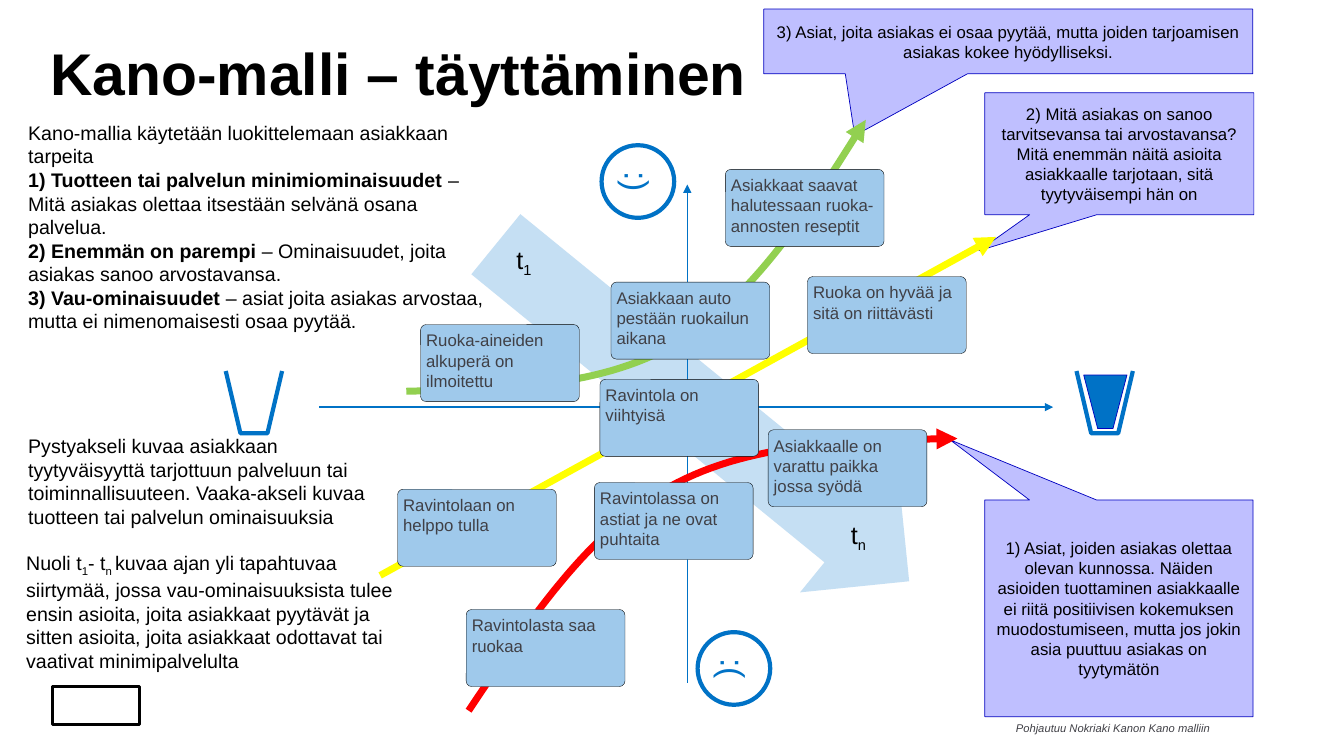
from lxml import etree
from pptx import Presentation
from pptx.dml.color import RGBColor
from pptx.enum.shapes import MSO_CONNECTOR, MSO_SHAPE
from pptx.enum.text import MSO_ANCHOR, PP_ALIGN
from pptx.oxml.ns import qn
from pptx.util import Cm, Pt

LEFT, CENTER = PP_ALIGN.LEFT, PP_ALIGN.CENTER
TOP, MIDDLE = MSO_ANCHOR.TOP, MSO_ANCHOR.MIDDLE
RECT, OVAL, ROUNDED = MSO_SHAPE.RECTANGLE, MSO_SHAPE.OVAL, MSO_SHAPE.ROUNDED_RECTANGLE
CALLOUT, DOWN_ARROW = MSO_SHAPE.RECTANGULAR_CALLOUT, MSO_SHAPE.DOWN_ARROW
TRAPEZOID, STRAIGHT = MSO_SHAPE.TRAPEZOID, MSO_CONNECTOR.STRAIGHT

THEME = {
    "font": "Arial",
    "black": RGBColor(0x00, 0x00, 0x00), "grey": RGBColor(0x40, 0x40, 0x46),
    "blue": RGBColor(0x00, 0x72, 0xC6), "navy": RGBColor(0x00, 0x00, 0xBF),
    "lilac": RGBColor(0xBF, 0xBF, 0xFF), "pale": RGBColor(0xC5, 0xDF, 0xF3),
    "sky": RGBColor(0x9F, 0xC9, 0xEB), "red": RGBColor(0xFF, 0x00, 0x00),
    "green": RGBColor(0x92, 0xD0, 0x50), "yellow": RGBColor(0xFF, 0xFF, 0x00),
    "title": 42, "face": 24, "time": 18, "body": 14, "label": 12, "source": 8,
}

prs = Presentation()
prs.slide_width, prs.slide_height = Cm(33.87), Cm(19.05)
s = prs.slides.add_slide(prs.slide_layouts[6])


def add_box(kind, x, y, w, h, fill=None, line=None, width=0.5):
    """Add a preset shape, or a text box when kind is None; lengths in cm."""
    at = Cm(x), Cm(y), Cm(w), Cm(h)
    if kind is None:
        return s.shapes.add_textbox(*at)
    sp = s.shapes.add_shape(kind, *at)
    sp.shadow.inherit = False
    if fill:
        sp.fill.solid()
        sp.fill.fore_color.rgb = THEME[fill]
    else:
        sp.fill.background()
    if line:
        sp.line.color.rgb = THEME[line]
        sp.line.width = Pt(width)
    else:
        sp.line.fill.background()
    return sp


def write(sp, lines, size, color="black", align=LEFT, anchor=TOP, wrap=True, mark="bold"):
    """Write one paragraph per line; text between asterisks is bold or subscript."""
    tf = sp.text_frame
    tf.word_wrap, tf.vertical_anchor = wrap, anchor
    for i, line in enumerate(lines):
        p = tf.add_paragraph() if i else tf.paragraphs[0]
        p.alignment = align
        for j, part in enumerate(line.split("*")):
            if not part:
                continue
            r = p.add_run()
            r.text = part
            r.font.name, r.font.size = THEME["font"], Pt(THEME[size])
            r.font.color.rgb = THEME[color]
            if j % 2 and mark == "bold":
                r.font.bold = True
            elif j % 2:
                r._r.get_or_add_rPr().set("baseline", "-25000")
    return tf


# Emblem and source note
add_box(RECT, 1.33, 17.3, 2.18, 0.95, line="black", width=2)
note = write(add_box(None, 25.35, 18.06, 5.46, 0.61),
             ["Pohjautuu Nokriaki Kanon Kano malliin"], "source", "grey", wrap=False)
note.paragraphs[0].runs[0].font.italic = True

# Title
tf = write(add_box(None, 1.27, 1.14, 31.22, 1.83), ["*Kano-malli – täyttäminen*"], "title")
tf.margin_left = tf.margin_right = tf.margin_top = tf.margin_bottom = 0
tf.paragraphs[0].line_spacing = 0.9

# Callouts for the three kinds of need
callouts = [
    (24.82, 2.34, 6.78, 3.07, -0.522, 0.796,
     "2) Mitä asiakas on sanoo tarvitsevansa tai arvostavansa? Mitä enemmän näitä "
     "asioita asiakkaalle tarjotaan, sitä tyytyväisempi hän on"),
    (24.82, 12.6, 6.76, 5.46, -0.63, -0.778,
     "1) Asiat, joiden asiakas olettaa olevan kunnossa. Näiden asioiden tuottaminen "
     "asiakkaalle ei riitä positiivisen kokemuksen muodostumiseen, mutta jos jokin "
     "asia puuttuu asiakas on tyytymätön"),
    (19.25, 0.23, 12.32, 1.63, -0.314, 1.456,
     "3) Asiat, joita asiakas ei osaa pyytää, mutta joiden tarjoamisen asiakas kokee "
     "hyödylliseksi."),
]
for x, y, w, h, tip_x, tip_y, text in callouts:
    sp = add_box(CALLOUT, x, y, w, h, "lilac", "navy")
    sp.adjustments[0], sp.adjustments[1] = tip_x, tip_y
    write(sp, [text], "label", align=CENTER, anchor=MIDDLE)

# Explanations on the left
write(add_box(None, 0.46, 2.92, 12.09, 5.64), [
    "Kano-mallia käytetään luokittelemaan asiakkaan tarpeita",
    "*1) Tuotteen tai palvelun minimiominaisuudet *– Mitä asiakas olettaa itsestään "
    "selvänä osana palvelua.",
    "*2) Enemmän on parempi *– Ominaisuudet, joita asiakas sanoo arvostavansa.",
    "*3) Vau-ominaisuudet *– asiat joita asiakas arvostaa, mutta ei nimenomaisesti "
    "osaa pyytää.",
], "body")
write(add_box(None, 0.46, 10.82, 9.7, 2.64), [
    "Pystyakseli kuvaa asiakkaan tyytyväisyyttä tarjottuun palveluun tai "
    "toiminnallisuuteen. Vaaka-akseli kuvaa tuotteen tai palvelun ominaisuuksia",
], "body")
write(add_box(None, 0.41, 13.77, 9.83, 3.25), [
    "Nuoli t*1*- t*n *kuvaa ajan yli tapahtuvaa siirtymää, jossa vau-ominaisuuksista "
    "tulee ensin asioita, joita asiakkaat pyytävät ja sitten asioita, joita asiakkaat "
    "odottavat tai vaativat minimipalvelulta",
], "body", mark="sub")

# Time arrow
add_box(DOWN_ARROW, 15.75, 3.68, 3.91, 13.44, "pale").rotation = 309.2

# Faces at the ends of the vertical axis
for x, y, face in [(17.58, 15.93, ":("), (15.16, 3.66, ":)")]:
    sp = add_box(OVAL, x, y, 1.83, 1.83, line="blue", width=3)
    sp.rotation = 90
    write(sp, [face], "face", "blue", CENTER, MIDDLE, wrap=False)

# Empty and full glass at the ends of the horizontal axis
for x in (5.69, 27.13):
    pen = s.shapes.build_freeform(Cm(x), Cm(9.35))
    pen.add_line_segments([(Cm(x + dx), Cm(y)) for dx, y in
                           [(0.37, 10.92), (1.05, 10.92), (1.42, 9.35)]], close=False)
    glass = pen.convert_to_shape()
    glass.shadow.inherit = False
    glass.fill.background()
    glass.line.color.rgb, glass.line.width = THEME["blue"], Pt(3)
water = add_box(TRAPEZOID, 27.31, 9.45, 1.09, 1.35, "blue", "navy")
water.rotation, water.adjustments[0] = 180, 0.323

# Axes and the straight "more is better" line
arrows = []
for x1, y1, x2, y2, color, width in [(8.05, 10.26, 26.54, 10.26, "blue", 1),
                                     (17.32, 17.2, 17.32, 4.65, "blue", 1),
                                     (9.58, 14.5, 25.1, 5.97, "yellow", 5)]:
    line = s.shapes.add_connector(STRAIGHT, Cm(x1), Cm(y1), Cm(x2), Cm(y2))
    etree.SubElement(line._element.spPr, qn("a:effectLst"))
    arrows.append((line, color, width))

# Curves for minimum and wow features, drawn through Bézier control points
STEPS = 30
curves = [
    ("red", [(11.81, 17.91), (13.31, 15.67), (14.81, 13.41), (16.87, 12.27),
             (18.92, 11.13), (21.51, 11.1), (24.13, 11.05)]),
    ("green", [(10.24, 9.86), (12.7, 9.8), (15.14, 9.78), (17.07, 8.64),
               (19.0, 7.49), (20.42, 5.26), (21.82, 3.02)]),
]
for color, knots in curves:
    points = []
    for k in (0, 3):
        for i in range(1, STEPS + 1):
            t = i / STEPS
            weights = (1 - t) ** 3, 3 * t * (1 - t) ** 2, 3 * t * t * (1 - t), t ** 3
            points.append([Cm(sum(w * knot[axis] for w, knot in zip(weights, knots[k:k + 4])))
                           for axis in (0, 1)])
    pen = s.shapes.build_freeform(Cm(knots[0][0]), Cm(knots[0][1]))
    pen.add_line_segments(points, close=False)
    curve = pen.convert_to_shape()
    curve.shadow.inherit = False
    curve.fill.background()
    arrows.append((curve, color, 5))

for sp, color, width in arrows:
    sp.line.color.rgb, sp.line.width = THEME[color], Pt(width)
    etree.SubElement(sp.line._get_or_add_ln(), qn("a:tailEnd"), type="triangle")

# Time labels
write(add_box(None, 12.75, 6.02, 0.91, 1.02), ["t*1*"], "time", align=CENTER,
      wrap=False, mark="sub")
write(add_box(None, 20.85, 12.95, 1.57, 1.02), ["t*n*"], "time", align=CENTER, mark="sub")

# Restaurant examples
examples = [
    (10.6, 8.18, "Ruoka-aineiden alkuperä on ilmoitettu"),
    (10.02, 12.33, "Ravintolaan on helppo tulla"),
    (11.75, 15.36, "Ravintolasta saa ruokaa"),
    (14.98, 12.16, "Ravintolassa on astiat ja ne ovat puhtaita"),
    (19.36, 10.83, "Asiakkaalle on varattu paikka jossa syödä"),
    (15.12, 9.56, "Ravintola on viihtyisä"),
    (20.35, 6.97, "Ruoka on hyvää ja sitä on riittävästi"),
    (15.4, 7.11, "Asiakkaan auto pestään ruokailun aikana"),
    (18.28, 4.27, "Asiakkaat saavat halutessaan ruoka-annosten reseptit"),
]
for x, y, text in examples:
    sp = add_box(ROUNDED, x, y, 4.0, 1.94, "sky", "black", 0.25)
    sp.adjustments[0] = 0.071
    tf = write(sp, [text], "label", "grey")
    tf.margin_left = tf.margin_right = tf.margin_top = tf.margin_bottom = Cm(0.1)

prs.save("out.pptx")
